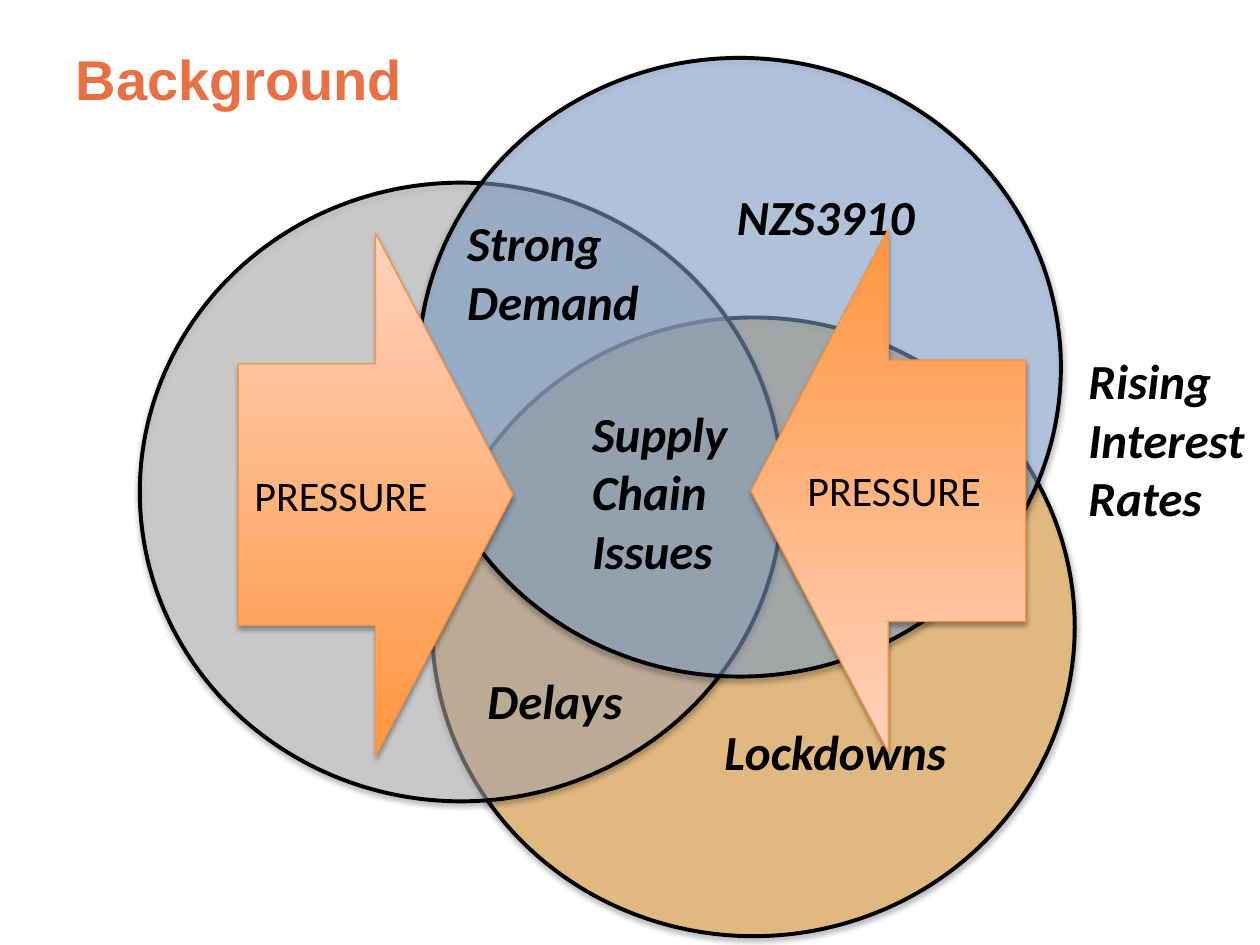
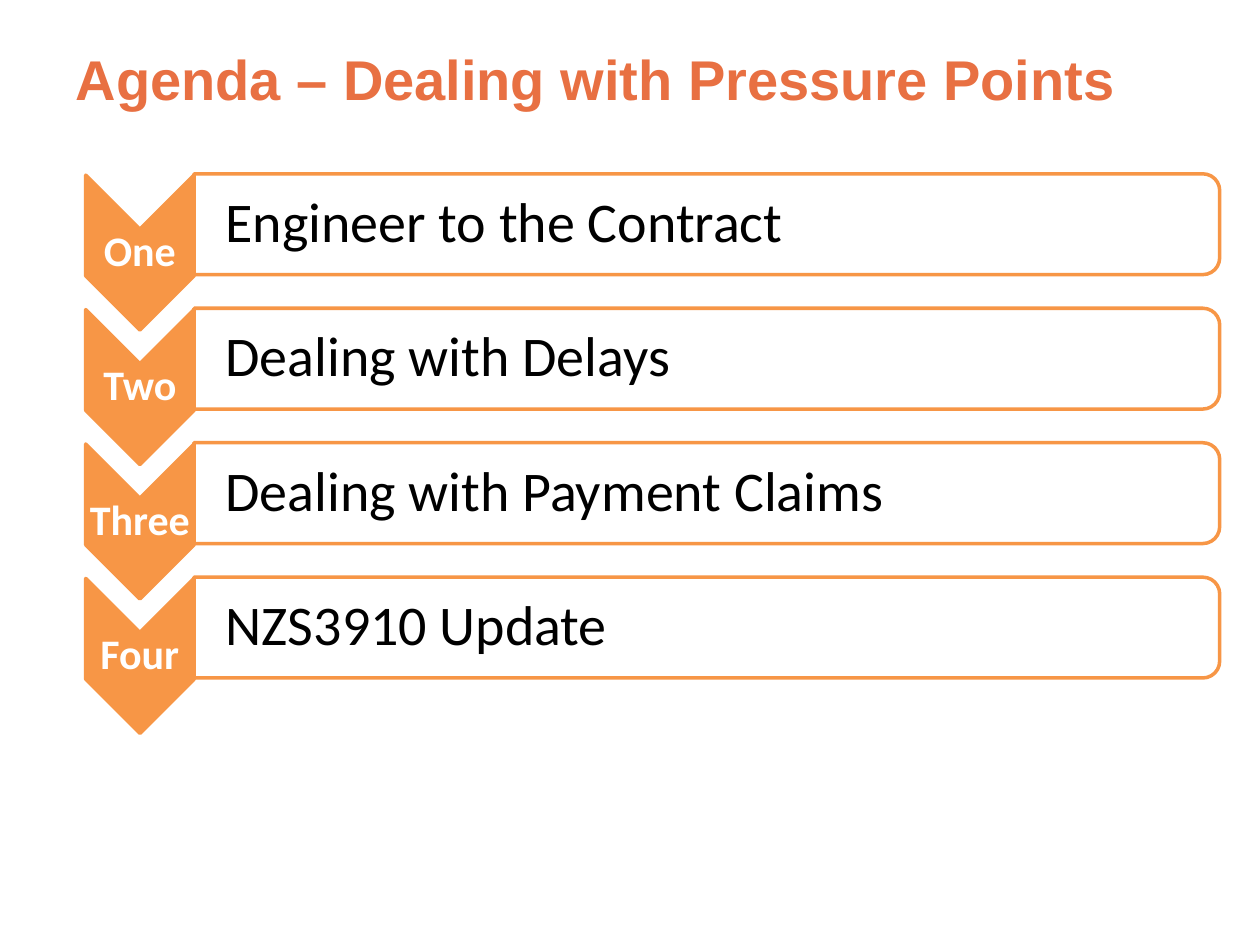
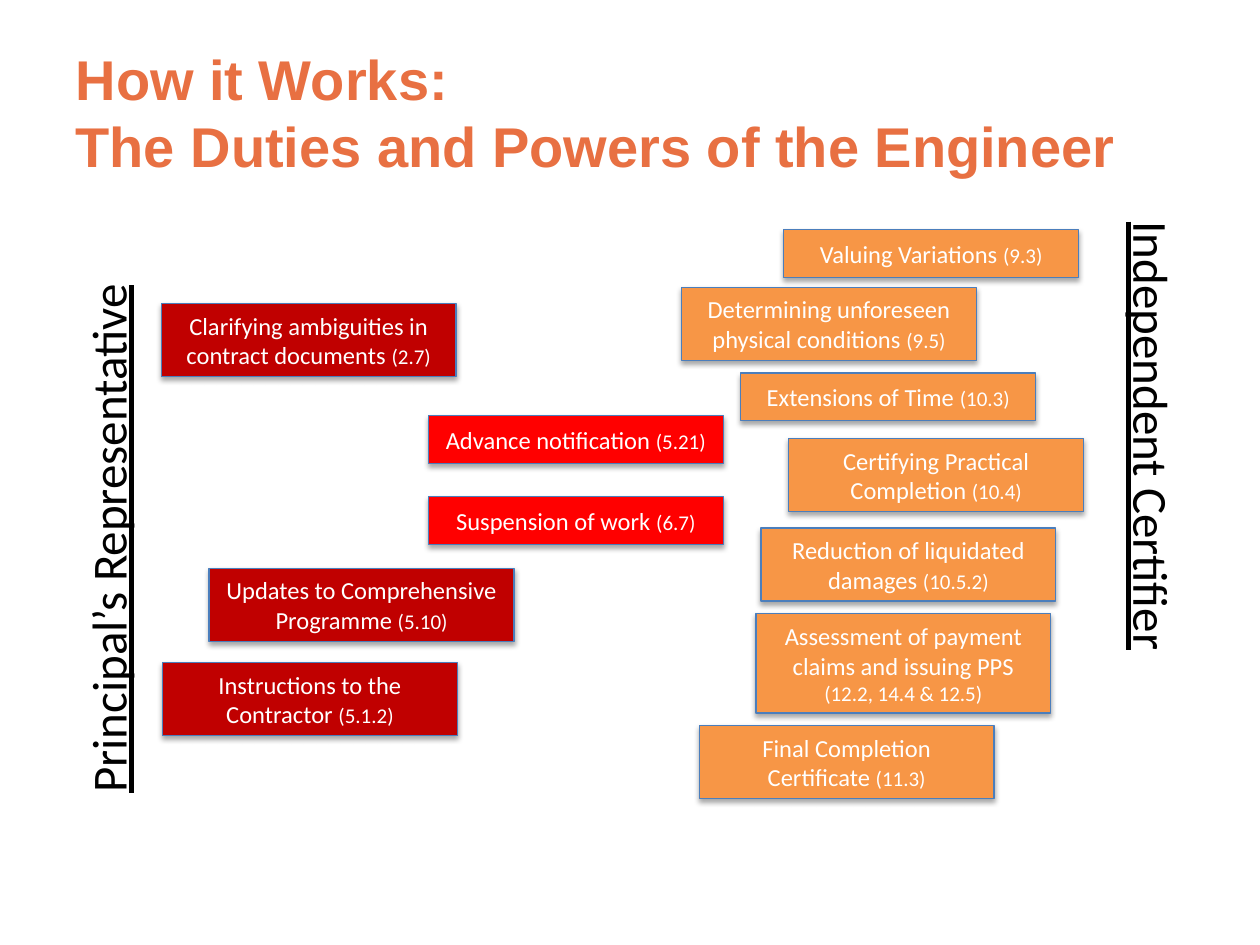
from lxml import etree
from pptx import Presentation
from pptx.dml.color import RGBColor
from pptx.enum.shapes import MSO_SHAPE as SHAPE
from pptx.enum.text import MSO_ANCHOR as ANCHOR, MSO_AUTO_SIZE as AUTO_SIZE, PP_ALIGN as ALIGN
from pptx.oxml.ns import qn
from pptx.util import Inches, Pt

COLORS = {
    "title": "E87042", "ink": "000000", "paper": "FFFFFF",
    "gold": "F0A230", "grey": "BFBFBF", "sky": "8EB4E3",
    "arrow_dark": "FF953E", "arrow_light": "FFD2BD", "arrow_edge": "F69240",
    "orange": "F79646", "dark_red": "C00000", "red": "FF0000", "duty_edge": "4B7EBC",
}
BODY_FONT = "Calibri"
TITLE_FONT = "Arial"


def rgb(name):
    return RGBColor.from_string(COLORS[name])


def style_font(font, size=None, color="ink", name=BODY_FONT, bold=None, italic=None, underline=None):
    font.name, font.bold, font.italic, font.underline = name, bold, italic, underline
    font.color.rgb = rgb(color)
    if size:
        font.size = Pt(size)


def add_shadow(shape):
    effects = etree.SubElement(shape._element.spPr, qn("a:effectLst"))
    shadow = etree.SubElement(effects, qn("a:outerShdw"), blurRad=str(Pt(3.1)),
                              dist=str(Pt(1.8)), dir="5400000", rotWithShape="0")
    black = etree.SubElement(shadow, qn("a:srgbClr"), val=COLORS["ink"])
    etree.SubElement(black, qn("a:alpha"), val="35000")


def add_figure(slide, kind, box, fill, edge, edge_width, opacity=100, shadow=False, rotation=0):
    """Add a preset shape; fill=None leaves the fill to the caller."""
    figure = slide.shapes.add_shape(kind, *map(Inches, box))
    figure.rotation = rotation
    if fill:
        figure.fill.solid()
        figure.fill.fore_color.rgb = rgb(fill)
    if opacity < 100:
        color = figure._element.spPr.find(qn("a:solidFill")).find(qn("a:srgbClr"))
        etree.SubElement(color, qn("a:alpha"), val=str(opacity * 1000))
    figure.line.color.rgb = rgb(edge)
    figure.line.width = Pt(edge_width)
    if shadow:
        add_shadow(figure)
    else:
        figure.shadow.inherit = False
    return figure


def add_label(slide, box, text, size, anchor=ANCHOR.TOP, align=ALIGN.LEFT, insets=None,
              spacing=None, rotation=0, **font):
    label = slide.shapes.add_textbox(*map(Inches, box))
    label.rotation = rotation
    frame = label.text_frame
    frame.word_wrap = True
    frame.vertical_anchor = anchor
    if insets:
        (frame.margin_left, frame.margin_top,
         frame.margin_right, frame.margin_bottom) = map(Inches, insets)
    paragraph = frame.paragraphs[0]
    paragraph.text = text
    paragraph.alignment = align
    paragraph.line_spacing = spacing
    style_font(paragraph.font, size, **font)


def add_titled_slide(deck, *lines):
    slide = deck.slides.add_slide(deck.slide_layouts[5])
    title = slide.shapes.title
    title.left, title.top, title.width, title.height = map(Inches, (0.5, 0.3, 9, 1.25))
    frame = title.text_frame
    frame.auto_size = AUTO_SIZE.NONE
    frame.vertical_anchor = ANCHOR.TOP
    frame.text = "\v".join(lines)
    paragraph = frame.paragraphs[0]
    paragraph.alignment = ALIGN.LEFT
    style_font(paragraph.font, 32, "title", TITLE_FONT, bold=True)
    return slide


def add_venn(slide, left, top):
    circles = [(2.32, 2.06, "gold"), (0, 0.99, "grey"), (2.21, 0, "sky")]
    for x, y, fill in circles:
        add_figure(slide, SHAPE.OVAL, (left + x, top + y, 5.1, 4.91), fill, "ink", 2.25,
                   opacity=50, shadow=True)
    causes = [
        (2.66, 4.81, 1.38, 0.57, "Delays"),
        (3.49, 2.69, 1.38, 1.51, "Supply Chain Issues"),
        (2.5, 1.18, 1.84, 1.04, "Strong Demand"),
        (7.43, 2.27, 1.62, 1.51, "Rising Interest Rates"),
        (4.54, 5.22, 1.98, 0.57, "Lockdowns"),
        (4.64, 0.97, 1.98, 0.57, "NZS3910"),
    ]
    for x, y, width, height, cause in causes:
        add_label(slide, (left + x, top + y, width, height), cause, 28, bold=True, italic=True)


def add_pressure_arrow(slide, left, top, rotation=0):
    arrow = add_figure(slide, SHAPE.RIGHT_ARROW, (left, top, 2.18, 4.15), None,
                       "arrow_edge", 0.75, shadow=True, rotation=rotation)
    arrow.fill.gradient()
    arrow.fill.gradient_angle = 90
    for stop, color in zip(arrow.fill.gradient_stops, ("arrow_dark", "arrow_light")):
        stop.color.rgb = rgb(color)
    # The turned arrow needs a separate label to stay upright
    if rotation:
        add_label(slide, (left + 0.35, top + 1.82, 1.79, 0.5), "PRESSURE", 24)
        return
    arrow.text_frame.vertical_anchor = ANCHOR.MIDDLE
    paragraph = arrow.text_frame.paragraphs[0]
    paragraph.text = "PRESSURE"
    paragraph.alignment = ALIGN.CENTER
    style_font(paragraph.font, 24)


def add_agenda_row(slide, left, top, number, topic):
    chevron_length, chevron_width, bar_length, bar_height = 1.23, 0.86, 8.14, 0.8
    # Quarter-turned shapes are placed by their unturned frames
    shift = (chevron_length - chevron_width) / 2
    add_figure(slide, SHAPE.CHEVRON, (left - shift, top + shift, chevron_length, chevron_width),
               "orange", "orange", 2, rotation=90)
    add_label(slide, (left, top + 0.43, chevron_width, 0.37), number, 24, ANCHOR.MIDDLE,
              ALIGN.CENTER, (0.02,) * 4, 0.9, color="paper", bold=True)
    shift = (bar_length - bar_height) / 2
    add_figure(slide, SHAPE.ROUND_2_SAME_RECTANGLE,
               (left + chevron_width + shift, top - 0.01 - shift, bar_height, bar_length),
               "paper", "orange", 2, opacity=90, rotation=90)
    add_label(slide, (left + chevron_width, top + 0.03, 8.1, 0.72), topic, 32, ANCHOR.MIDDLE,
              insets=(0.25, 0.02, 0.02, 0.02), spacing=0.9)


def add_agenda(slide, left, top):
    rows = [("One", "Engineer to the Contract"), ("Two", "Dealing with Delays"),
            ("Three", "Dealing with Payment Claims"), ("Four", "NZS3910 Update")]
    for index, (number, topic) in enumerate(rows):
        add_agenda_row(slide, left, top + index * 1.067, number, topic)


def add_duty(slide, box, fill, duty, clause):
    card = add_figure(slide, SHAPE.RECTANGLE, box, fill, "duty_edge", 0.75, shadow=True)
    card.text_frame.vertical_anchor = ANCHOR.MIDDLE
    card.text_frame.word_wrap = True
    paragraph = card.text_frame.paragraphs[0]
    paragraph.alignment = ALIGN.CENTER
    style_font(paragraph.font, color="paper")
    for text, size in ((duty + " ", 14), (f"({clause})", 12)):
        run = paragraph.add_run()
        run.text = text
        run.font.size = Pt(size)


def add_duties(slide, left, top):
    """Place duties between the two roles: dark red, red or orange by who they belong to."""
    heights = {1: 0.38, 2: 0.58, 3: 0.79}
    duties = {
        "dark_red": [
            (0, 0.59, 2, "Clarifying ambiguities in contract documents", "2.7"),
            (0.01, 3.44, 2, "Instructions to the Contractor", "5.1.2"),
            (0.38, 2.69, 2, "Updates to Comprehensive Programme", "5.10"),
        ],
        "orange": [
            (4.94, 0, 1, "Valuing Variations", "9.3"),
            (4.13, 0.46, 2, "Determining unforeseen physical conditions", "9.5"),
            (4.6, 1.14, 1, "Extensions of Time", "10.3"),
            (4.98, 1.66, 2, "Certifying Practical Completion", "10.4"),
            (4.76, 2.37, 2, "Reduction of liquidated damages", "10.5.2"),
            (4.72, 3.05, 3, "Assessment of payment claims and issuing PPS", "12.2, 14.4 & 12.5"),
            (4.27, 3.94, 2, "Final Completion Certificate", "11.3"),
        ],
        "red": [
            (2.12, 1.48, 1, "Advance notification", "5.21"),
            (2.12, 2.12, 1, "Suspension of work", "6.7"),
        ],
    }
    for fill, cards in duties.items():
        for x, y, lines, duty, clause in cards:
            width = 2.42 if duty.startswith("Updates") else 2.34
            add_duty(slide, (left + x, top + y, width, heights[lines]), fill, duty, clause)


def add_role(slide, center_x, center_y, length, role, rotation):
    add_label(slide, (center_x - length / 2, center_y - 0.36, length, 0.72), role, 28,
              ANCHOR.MIDDLE, rotation=rotation, underline=True)


def main():
    deck = Presentation()
    deck.slide_width, deck.slide_height = Inches(10), Inches(7.5)

    background = add_titled_slide(deck, "Background")
    add_venn(background, 1.11, 0.46)
    add_pressure_arrow(background, 1.89, 1.85)
    add_pressure_arrow(background, 5.96, 1.82, rotation=180)

    agenda = add_titled_slide(deck, "Agenda – Dealing with Pressure Points")
    add_agenda(agenda, 0.68, 1.39)

    powers = add_titled_slide(deck, "How it Works:", "The Duties and Powers of the Engineer")
    add_role(powers, 0.85, 4.2, 4.38, "Principal’s Representative", 270)
    add_role(powers, 9.15, 4.21, 5.1, "Independent Certifier", 90)
    add_duties(powers, 1.28, 1.82)

    deck.save("out.pptx")


if __name__ == "__main__":
    main()
